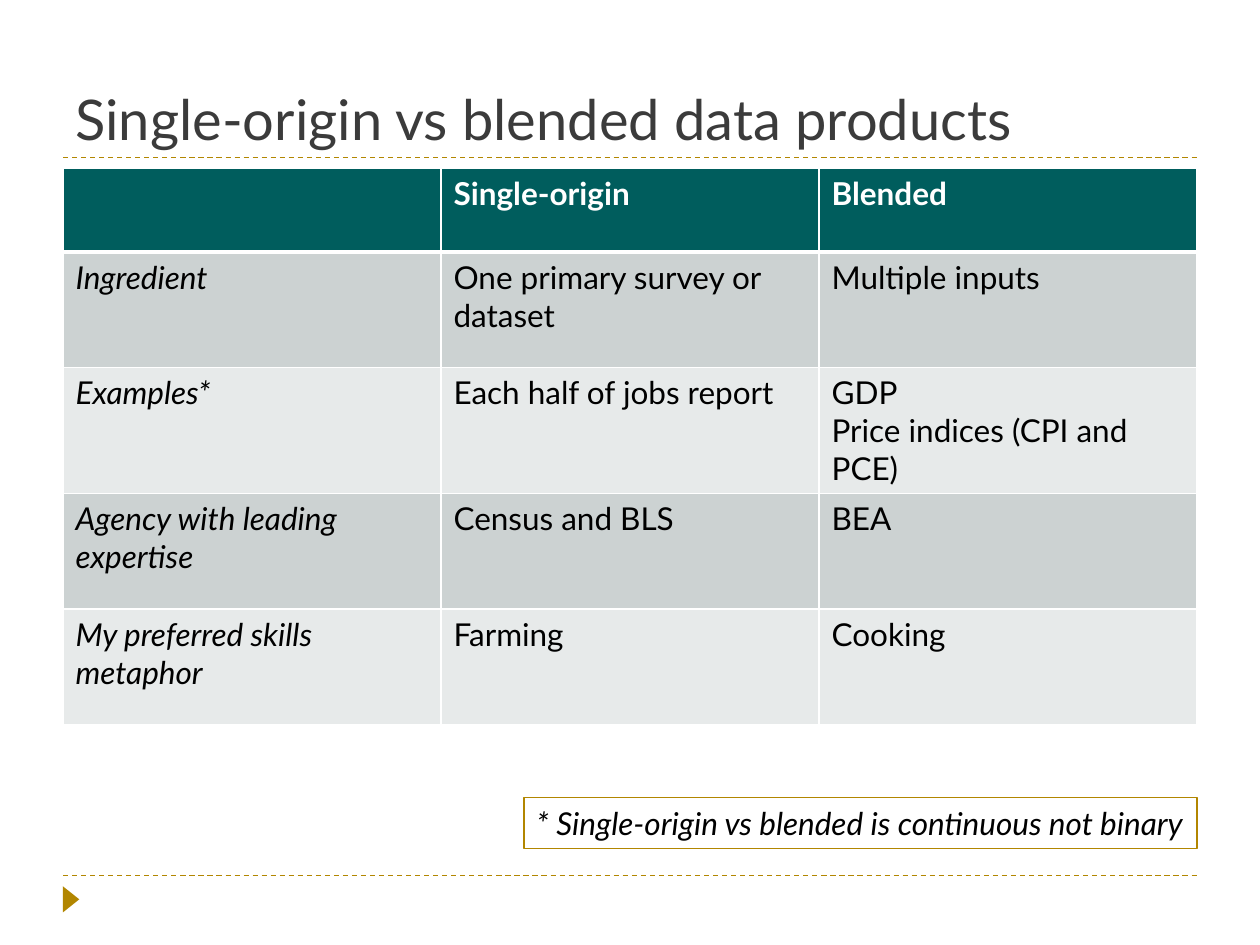
from dataclasses import dataclass

from lxml import etree
from pptx import Presentation
from pptx.dml.color import RGBColor
from pptx.enum import dml, shapes, text
from pptx.oxml import ns
from pptx.util import Pt


@dataclass(frozen=True)
class Theme:
    font: str = "Lato"
    title_size: int = 32
    body_size: int = 18
    title: str = "3B3B3B"
    ink: str = "000000"
    white: str = "FFFFFF"
    gold: str = "B28600"
    header: str = "005D5D"
    bands: tuple = ("CCD2D2", "E7EAEA")


theme = Theme()


def style(paragraph, size, color, bold=False, italic=False):
    font = paragraph.font
    font.name, font.size = theme.font, Pt(size)
    font.bold, font.italic = bold, italic
    font.color.rgb = RGBColor.from_string(color)


def add_border(cell, side, width):
    properties = cell._tc.get_or_add_tcPr()
    line = etree.SubElement(properties, ns.qn(f"a:ln{side}"), w=str(Pt(width)))
    fill = etree.SubElement(line, ns.qn("a:solidFill"))
    etree.SubElement(fill, ns.qn("a:srgbClr"), val=theme.white)


presentation = Presentation()
presentation.slide_width, presentation.slide_height = Pt(720), Pt(540)
slide = presentation.slides.add_slide(presentation.slide_layouts[6])
left, width = 36, 648
gold = RGBColor.from_string(theme.gold)

# Dashed rules below the title and above the footer
for y in (500.4, 90):
    rule = slide.shapes.add_connector(
        shapes.MSO_CONNECTOR.STRAIGHT, Pt(left), Pt(y), Pt(left + width), Pt(y))
    rule.line.color.rgb = gold
    rule.line.width = Pt(0.75)
    rule.line.dash_style = dml.MSO_LINE.DASH
    etree.SubElement(rule._element.spPr, ns.qn("a:effectLst"))

# Footer marker
marker = slide.shapes.add_shape(
    shapes.MSO_SHAPE.ISOSCELES_TRIANGLE, Pt(33.1), Pt(509.2), Pt(15), Pt(9.4))
marker.rotation = 90
marker.shadow.inherit = False
marker.fill.solid()
marker.fill.fore_color.rgb = gold
marker.line.fill.background()

# Title
title = slide.shapes.add_textbox(Pt(left), Pt(12.2), Pt(width), Pt(77.8))
title.text_frame.word_wrap = True
title.text_frame.vertical_anchor = text.MSO_ANCHOR.BOTTOM
title.text_frame.text = "Single-origin vs blended data products"
style(title.text_frame.paragraphs[0], theme.title_size, theme.title)

# Comparison table
rows = [
    ("", "Single-origin", "Blended"),
    ("Ingredient", "One primary survey or dataset", "Multiple inputs"),
    ("Examples*", "Each half of jobs report", "GDP\nPrice indices (CPI and PCE)"),
    ("Agency with leading expertise", "Census and BLS", "BEA"),
    ("My preferred skills metaphor", "Farming", "Cooking"),
]
header_height, row_height = 48, 66
table = slide.shapes.add_table(
    len(rows), 3, Pt(left), Pt(96), Pt(width),
    Pt(header_height + row_height * (len(rows) - 1))).table
for column in table.columns:
    column.width = Pt(width / 3)

for r, row in enumerate(rows):
    is_header = r == 0
    table.rows[r].height = Pt(header_height if is_header else row_height)
    for c, wording in enumerate(row):
        cell = table.cell(r, c)
        for side in "LRTB":
            heavy = (side == "B" and is_header) or (side == "T" and r == 1)
            add_border(cell, side, 3 if heavy else 1)
        cell.fill.solid()
        cell.fill.fore_color.rgb = RGBColor.from_string(
            theme.header if is_header else theme.bands[(r - 1) % 2])
        cell.text = wording
        for paragraph in cell.text_frame.paragraphs:
            style(paragraph, theme.body_size,
                  theme.white if is_header else theme.ink,
                  bold=is_header, italic=c == 0 and not is_header)

# Footnote box
note = slide.shapes.add_shape(
    shapes.MSO_SHAPE.RECTANGLE, Pt(299.5), Pt(455.8), Pt(384.5), Pt(29))
note.shadow.inherit = False
note.fill.background()
note.line.color.rgb = gold
note.line.width = Pt(0.75)
note.text_frame.word_wrap = False
note.text_frame.auto_size = text.MSO_AUTO_SIZE.SHAPE_TO_FIT_TEXT
note.text_frame.text = "* Single-origin vs blended is continuous not binary"
note.text_frame.paragraphs[0].alignment = text.PP_ALIGN.LEFT
style(note.text_frame.paragraphs[0], theme.body_size, theme.ink, italic=True)

presentation.save("out.pptx")
